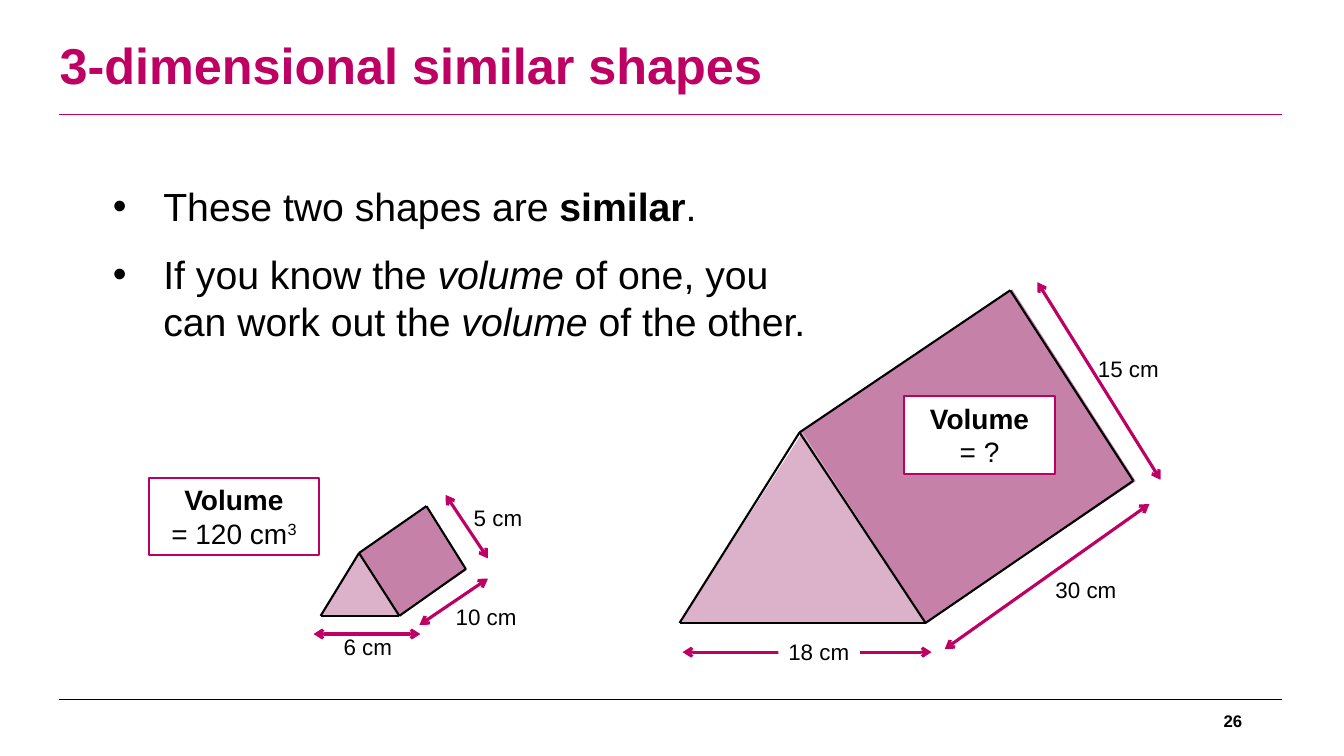
from dataclasses import dataclass
from typing import NamedTuple

from lxml.etree import SubElement
from pptx import Presentation
from pptx.dml.color import RGBColor
from pptx.enum.shapes import MSO_CONNECTOR, MSO_SHAPE
from pptx.enum.text import MSO_ANCHOR, MSO_AUTO_SIZE, PP_ALIGN
from pptx.oxml.ns import qn
from pptx.util import Inches, Pt


@dataclass(frozen=True)
class Theme:
    font: str = "Arial"
    accent: RGBColor = RGBColor(0xBE, 0x00, 0x64)
    ink: RGBColor = RGBColor(0x00, 0x00, 0x00)
    paper: RGBColor = RGBColor(0xFF, 0xFF, 0xFF)
    side_face: RGBColor = RGBColor(0xC5, 0x81, 0xA8)
    front_face: RGBColor = RGBColor(0xDC, 0xB2, 0xCA)
    title: int = 36
    body: int = 28
    volume: int = 20
    label: int = 16
    number: int = 12


THEME = Theme()


class Point(NamedTuple):
    x: float
    y: float


class Box(NamedTuple):
    x: float
    y: float
    w: float
    h: float

    def lengths(self) -> list:
        return [Inches(v) for v in self]


class Words(NamedTuple):
    text: str
    bold: bool = False
    italic: bool = False
    raised: bool = False


class Prism(NamedTuple):
    corner: Point
    scale_x: float = 1
    scale_y: float = 1


class Dimension(NamedTuple):
    text: str
    start: Point
    end: Point
    label: Point
    width: float = 0.81
    filled: bool = False


class VolumeBox(NamedTuple):
    box: Box
    value: list[Words]
    filled: bool = False


# Measured from the front left corner of the large prism, upwards
VERTICES = {
    "left": Point(0, 0), "right": Point(2.44, 0), "apex": Point(1.19, 1.89),
    "back_top": Point(3.28, 3.3), "back_right": Point(4.5, 1.41),
}
EDGES = [("apex", "back_top"), ("back_top", "back_right"), ("right", "back_right"),
         ("apex", "right"), ("right", "left"), ("apex", "left")]
SIDE_FACE = Box(1.57, 2.78, 2.58, 2.26)
FRONT_FACE = Box(0, 1.89, 2.44, 1.89)

LARGE_PRISM = Prism(Point(6.74, 6.18))
SMALL_PRISM = Prism(Point(3.18, 6.11), 0.32, 0.33)

DIMENSIONS = [
    Dimension("18 cm", Point(6.77, 6.47), Point(9.24, 6.47), Point(7.72, 6.28), filled=True),
    Dimension("6 cm", Point(3.11, 6.29), Point(4.17, 6.29), Point(3.31, 6.23), 0.69),
    Dimension("15 cm", Point(10.29, 2.8), Point(11.51, 4.76), Point(10.79, 3.47)),
    Dimension("30 cm", Point(9.37, 6.44), Point(11.4, 5), Point(10.37, 5.67)),
    Dimension("5 cm", Point(4.42, 4.91), Point(4.84, 5.54), Point(4.6, 4.95), 0.69),
    Dimension("10 cm", Point(4.16, 6.2), Point(4.84, 5.74), Point(4.42, 5.93)),
]
VOLUMES = [
    VolumeBox(Box(1.48, 4.74, 1.68, 0.77), [Words("= 120 cm"), Words("3", raised=True)]),
    VolumeBox(Box(8.97, 3.93, 1.49, 0.77), [Words("= ?")], filled=True),
]
BULLETS = [
    [Words("These two shapes are "), Words("similar", bold=True), Words(".")],
    [Words("If you know the "), Words("volume", italic=True),
     Words(" of one, you can work out the "), Words("volume", italic=True),
     Words(" of the other.")],
]


def write(p, words: list[Words], size: int, color: RGBColor = THEME.ink) -> None:
    for word in words:
        r = p.add_run()
        r.text = word.text
        r.font.name, r.font.size = THEME.font, Pt(size)
        r.font.bold, r.font.italic = word.bold, word.italic
        r.font.color.rgb = color
        if word.raised:
            r._r.get_or_add_rPr().set("baseline", "30000")


def place(shape, box: Box) -> None:
    shape.left, shape.top, shape.width, shape.height = box.lengths()


def add_line(s, start: Point, end: Point, color: RGBColor, width: float, arrows: bool = False) -> None:
    line = s.shapes.add_connector(MSO_CONNECTOR.STRAIGHT, *(Inches(v) for v in (*start, *end)))
    line.line.color.rgb = color
    line.line.width = Pt(width)
    if arrows:
        ln = line.line._get_or_add_ln()
        for tag in ("a:headEnd", "a:tailEnd"):
            SubElement(ln, qn(tag), type="arrow")
    SubElement(line._element.spPr, qn("a:effectLst"))


def add_face(s, kind: MSO_SHAPE, box: Box, prism: Prism, color: RGBColor, adjust: float):
    face = s.shapes.add_shape(kind, *Box(
        prism.corner.x + box.x * prism.scale_x, prism.corner.y - box.y * prism.scale_y,
        box.w * prism.scale_x, box.h * prism.scale_y).lengths())
    face.adjustments[0] = adjust
    face.shadow.inherit = False
    face.fill.solid()
    face.fill.fore_color.rgb = color
    face.line.fill.background()
    return face


def add_prism(s, prism: Prism) -> None:
    side = add_face(s, MSO_SHAPE.PARALLELOGRAM, SIDE_FACE, prism, THEME.side_face, 0.02)
    side.rotation = 326.1
    add_face(s, MSO_SHAPE.ISOSCELES_TRIANGLE, FRONT_FACE, prism, THEME.front_face, 0.5)
    spots = {name: Point(prism.corner.x + v.x * prism.scale_x, prism.corner.y - v.y * prism.scale_y)
             for name, v in VERTICES.items()}
    for start, end in EDGES:
        add_line(s, spots[start], spots[end], THEME.ink, 1.5)


def add_text(s, box: Box, filled: bool = False):
    shape = s.shapes.add_textbox(*box.lengths())
    if filled:
        shape.fill.solid()
        shape.fill.fore_color.rgb = THEME.paper
    return shape


def add_dimension(s, dim: Dimension) -> None:
    add_line(s, dim.start, dim.end, THEME.accent, 2.25, arrows=True)
    tf = add_text(s, Box(*dim.label, dim.width, 0.37), dim.filled).text_frame
    tf.word_wrap = False
    write(tf.paragraphs[0], [Words(dim.text)], THEME.label)


def add_volume(s, volume: VolumeBox) -> None:
    shape = add_text(s, volume.box, volume.filled)
    shape.line.color.rgb = THEME.accent
    shape.line.width = Pt(1.5)
    tf = shape.text_frame
    tf.word_wrap = True
    for p, words in ((tf.paragraphs[0], [Words("Volume", bold=True)]),
                     (tf.add_paragraph(), volume.value)):
        p.alignment = PP_ALIGN.CENTER
        write(p, words, THEME.volume)


def fill_title(title) -> None:
    place(title, Box(0.49, 0.12, 10, 1.11))
    tf = title.text_frame
    tf.vertical_anchor = MSO_ANCHOR.MIDDLE
    tf.auto_size = MSO_AUTO_SIZE.NONE
    p = tf.paragraphs[0]
    p.alignment, p.line_spacing = PP_ALIGN.LEFT, 0.9
    write(p, [Words("3-dimensional similar shapes", bold=True)], THEME.title, THEME.accent)


def fill_bullets(body) -> None:
    place(body, Box(1.02, 1.76, 7.27, 1.7))
    tf = body.text_frame
    tf.auto_size = MSO_AUTO_SIZE.NONE
    for i, words in enumerate(BULLETS):
        p = tf.add_paragraph() if i else tf.paragraphs[0]
        p.space_before = Pt(15 if i else 0)
        pPr = p._p.get_or_add_pPr()
        pPr.set("marL", str(Inches(0.5)))
        pPr.set("indent", str(Inches(-0.5)))
        SubElement(pPr, qn("a:buChar"), char="•")
        write(p, words, THEME.body)


def add_page_number(s) -> None:
    tf = add_text(s, Box(9.42, 6.95, 3, 0.4)).text_frame
    tf.word_wrap = True
    tf.vertical_anchor = MSO_ANCHOR.MIDDLE
    tf.paragraphs[0].alignment = PP_ALIGN.RIGHT
    write(tf.paragraphs[0], [Words("26", bold=True)], THEME.number)


def main() -> None:
    prs = Presentation()
    prs.slide_width, prs.slide_height = Inches(13.33), Inches(7.5)
    s = prs.slides.add_slide(prs.slide_layouts[1])
    for y, color in ((6.94, THEME.ink), (1.14, THEME.accent)):
        add_line(s, Point(0.59, y), Point(12.72, y), color, 0.75)
    fill_title(s.shapes.title)
    fill_bullets(s.placeholders[1])
    for prism in (LARGE_PRISM, SMALL_PRISM):
        add_prism(s, prism)
    for dim in DIMENSIONS:
        add_dimension(s, dim)
    for volume in VOLUMES:
        add_volume(s, volume)
    add_page_number(s)
    prs.save("out.pptx")


if __name__ == "__main__":
    main()
